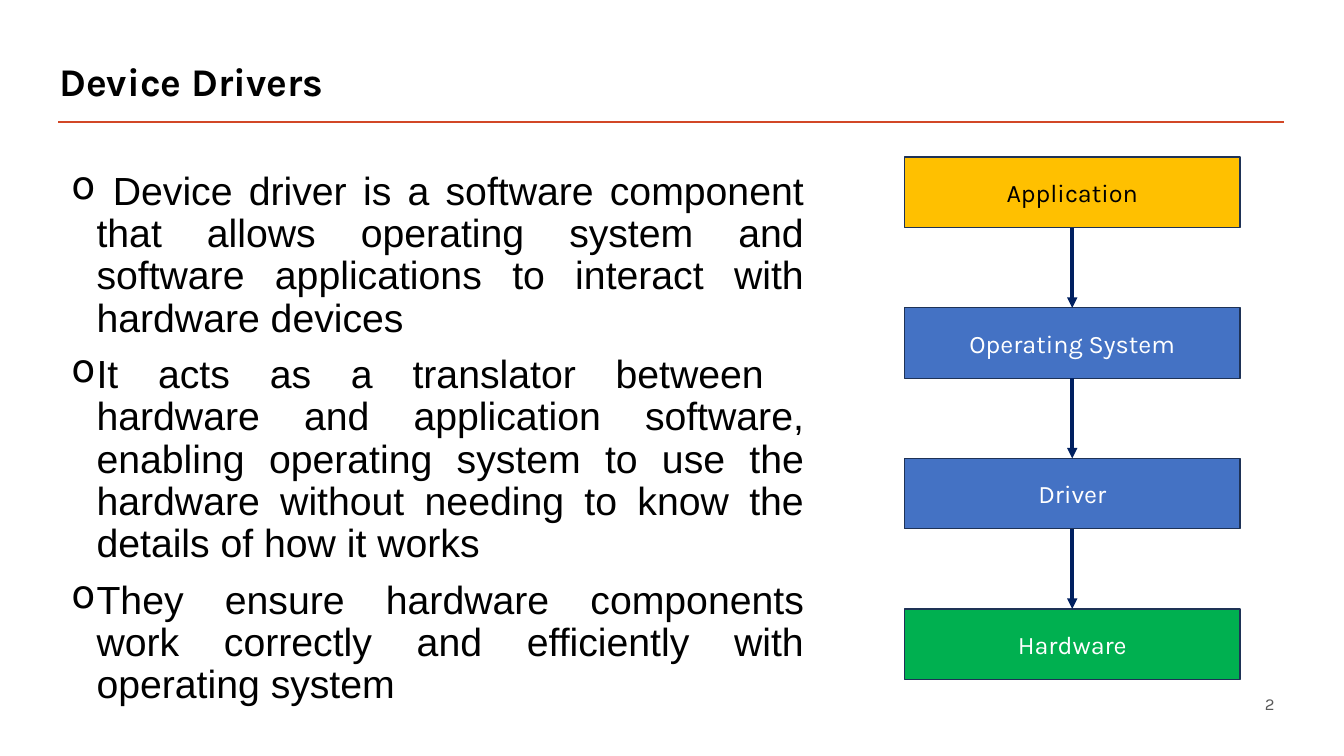
import pptx
import pptx.util
import pptx.dml.color
import pptx.enum.shapes
import pptx.enum.text
import pptx.oxml
import pptx.oxml.ns
import lxml.etree
import dataclasses

Inches = pptx.util.Inches
Pt = pptx.util.Pt
Align = pptx.enum.text.PP_ALIGN
Anchor = pptx.enum.text.MSO_ANCHOR
qn = pptx.oxml.ns.qn


@dataclasses.dataclass
class Theme:
    head: str = "Karla"
    body: str = "Arial"
    ink: str = "000000"
    white: str = "FFFFFF"
    gray: str = "595959"
    rule: str = "D24726"
    edge: str = "1E3256"
    arrow: str = "002060"
    gold: str = "FFC000"
    blue: str = "4472C4"
    green: str = "00B050"
    big: int = 28
    label: int = 18
    small: int = 12


def color(code):
    return pptx.dml.color.RGBColor.from_string(code)


class Page:
    def __init__(self, slide, theme):
        self.slide = slide
        self.theme = theme

    def style(self, para, font, size, ink, align=Align.LEFT, bold=False):
        para.alignment = align
        para.font.name = font
        para.font.size = Pt(size)
        para.font.color.rgb = color(ink)
        para.font.bold = bold

    def frame(self, left, top, width, height, anchor=Anchor.MIDDLE):
        box = self.slide.shapes.add_textbox(
            Inches(left), Inches(top), Inches(width), Inches(height))
        frame = box.text_frame
        frame.word_wrap = True
        frame.vertical_anchor = anchor
        return frame

    def text(self, words, place, size, ink, **look):
        para = self.frame(*place).paragraphs[0]
        para.text = words
        self.style(para, self.theme.head, size, ink, **look)

    def bullets(self, items, place):
        frame = self.frame(*place, anchor=Anchor.TOP)
        for index, item in enumerate(items):
            para = frame.add_paragraph() if index else frame.paragraphs[0]
            para.text = item
            self.style(para, self.theme.body, self.theme.big,
                       self.theme.ink, Align.JUSTIFY)
            para.line_spacing = 0.9
            para.space_before = Pt(10)
            props = para._p.get_or_add_pPr()
            props.set("marL", str(Inches(0.25)))
            props.set("indent", str(-Inches(0.25)))
            mark = lxml.etree.Element(qn("a:buChar"), char="o")
            props.find(qn("a:defRPr")).addprevious(mark)

    def box(self, words, place, fill, ink):
        shape = self.slide.shapes.add_shape(
            pptx.enum.shapes.MSO_SHAPE.RECTANGLE, *map(Inches, place))
        shape.shadow.inherit = False
        shape.fill.solid()
        shape.fill.fore_color.rgb = color(fill)
        shape.line.color.rgb = color(self.theme.edge)
        shape.line.width = Pt(1)
        shape.text_frame.vertical_anchor = Anchor.MIDDLE
        para = shape.text_frame.paragraphs[0]
        para.text = words
        self.style(para, self.theme.head, self.theme.label, ink, Align.CENTER)
        return shape

    def line(self, start, end, ink, width):
        line = self.slide.shapes.add_connector(
            pptx.enum.shapes.MSO_CONNECTOR.STRAIGHT,
            *map(Inches, start + end))
        line.line.color.rgb = color(ink)
        line.line.width = Pt(width)
        lxml.etree.SubElement(line._element.spPr, qn("a:effectLst"))
        return line

    def link(self, upper, lower):
        """Join the bottom of one box to the top of the next with an arrow."""
        line = self.line((0, 0), (0, 0), self.theme.arrow, 2.5)
        line.begin_connect(upper, 2)
        line.end_connect(lower, 0)
        stroke = line.line._get_or_add_ln()
        lxml.etree.SubElement(stroke, qn("a:tailEnd"), type="triangle")


def main():
    deck = pptx.Presentation()
    deck.slide_width = Inches(13.33)
    deck.slide_height = Inches(7.5)
    theme = Theme()
    page = Page(deck.slides.add_slide(deck.slide_layouts[6]), theme)

    page.line((0.58, 1.21), (12.74, 1.21), theme.rule, 2)
    page.text("Device Drivers", (0.49, 0.45, 10, 0.7),
              theme.big, theme.ink, bold=True)
    page.text("2", (9.16, 6.78, 3.58, 0.4),
              theme.small, theme.gray, align=Align.RIGHT)
    page.bullets([
        " Device driver is a software component that allows operating system "
        "and software applications to interact with hardware devices",
        "It acts as a translator between  hardware and application software, "
        "enabling operating system to use the hardware without needing to "
        "know the details of how it works",
        "They ensure hardware components work correctly and efficiently with "
        "operating system",
    ], (0.61, 1.65, 7.46, 5.63))

    layers = [
        ("Application", theme.gold, theme.ink),
        ("Operating System", theme.blue, theme.white),
        ("Driver", theme.blue, theme.white),
        ("Hardware", theme.green, theme.white),
    ]
    top, last = 1.56, 6.04
    step = (last - top) / (len(layers) - 1)
    boxes = [page.box(words, (8.97, top + row * step, 3.33, 0.7), fill, ink)
             for row, (words, fill, ink) in enumerate(layers)]
    for upper, lower in zip(boxes, boxes[1:]):
        page.link(upper, lower)

    deck.save("out.pptx")


if __name__ == "__main__":
    main()
